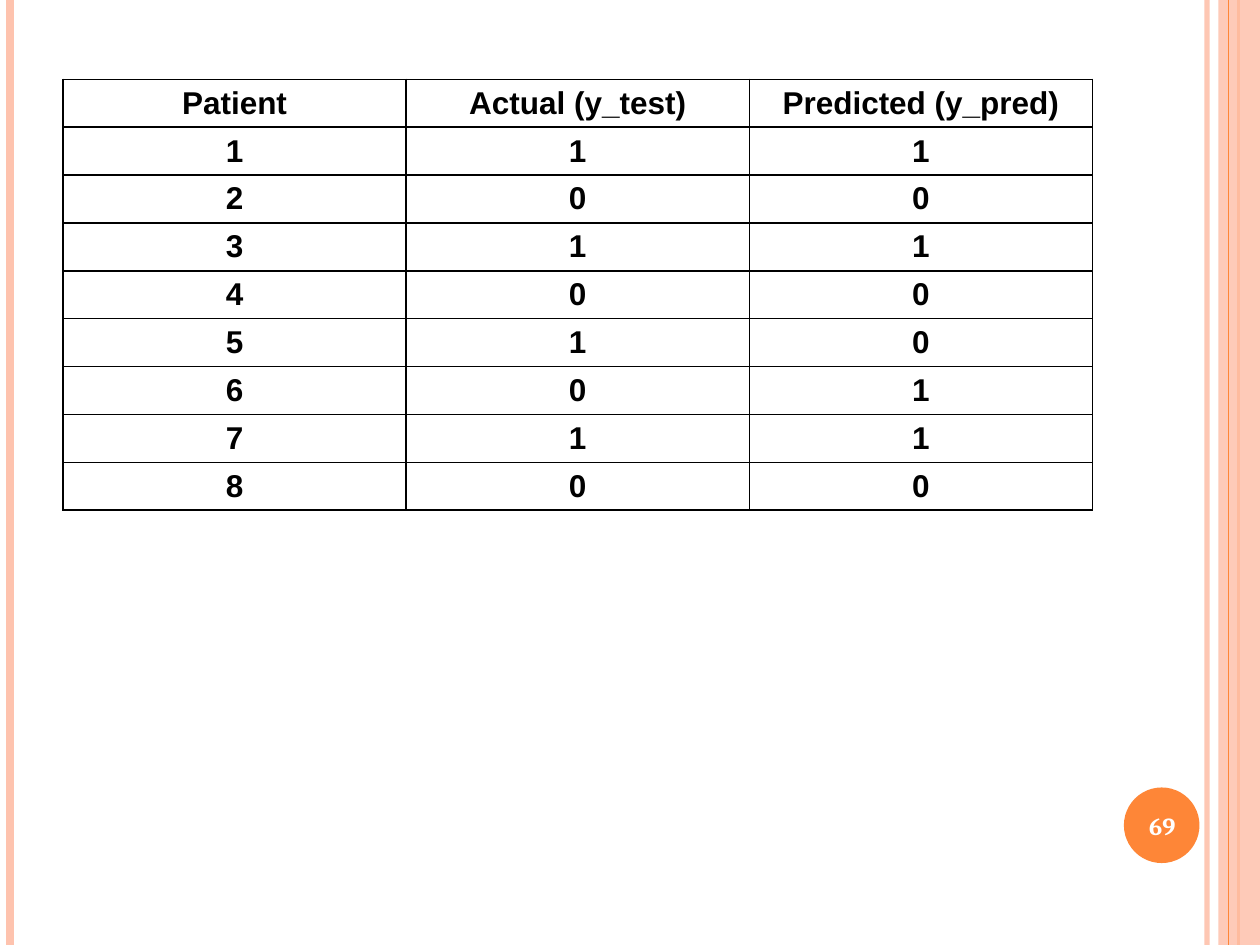
from lxml.etree import SubElement
from pptx import Presentation
from pptx.dml.color import RGBColor
from pptx.enum.shapes import MSO_CONNECTOR, MSO_SHAPE
from pptx.enum.text import MSO_ANCHOR, PP_ALIGN
from pptx.oxml import parse_xml
from pptx.oxml.ns import nsdecls, qn
from pptx.util import Inches, Pt

PEACH, ORANGE, BLACK, WHITE = "FEC3AE", "FE8637", "000000", "FFFFFF"
SLIDE_WIDTH, SLIDE_HEIGHT = 10, 7.5
HEADERS = ["Patient", "Actual (y_test)", "Predicted (y_pred)"]
ACTUAL = [1, 0, 1, 0, 1, 0, 1, 0]
PREDICTED = [1, 0, 1, 0, 0, 1, 1, 0]
ROW_HEIGHT = 0.38
CELL_FORMAT = {"size": Pt(18), "name": "Arial", "bold": True}
NUMBER_FORMAT = {"size": Pt(14), "name": "Cambria", "bold": True}


def color(hex_value):
    return RGBColor.from_string(hex_value)


def set_opacity(fill_parent, percent):
    """Set the opacity of the solid fill directly below the given element."""
    solid_color = fill_parent.find(qn("a:solidFill"))[0]
    SubElement(solid_color, qn("a:alpha"), val=str(percent * 1000))


def add_vertical_line(slide, x, hex_value, width, opacity=100):
    line = slide.shapes.add_connector(
        MSO_CONNECTOR.STRAIGHT, Inches(x), 0, Inches(x), Inches(SLIDE_HEIGHT))
    line.line.color.rgb = color(hex_value)
    line.line.width = Pt(width)
    properties = line._element.spPr
    if opacity < 100:
        set_opacity(properties.find(qn("a:ln")), opacity)
    SubElement(properties, qn("a:effectLst"))


def add_filled_shape(slide, kind, bounds, hex_value, opacity=100):
    shape = slide.shapes.add_shape(kind, *map(Inches, bounds))
    shape.shadow.inherit = False
    shape.fill.solid()
    shape.fill.fore_color.rgb = color(hex_value)
    shape.line.fill.background()
    if opacity < 100:
        set_opacity(shape._element.spPr, opacity)


def write_centered(text_frame, text, hex_value, font_format):
    paragraph = text_frame.paragraphs[0]
    paragraph.alignment = PP_ALIGN.CENTER
    run = paragraph.add_run()
    run.text = text
    run.font.color.rgb = color(hex_value)
    for name, value in font_format.items():
        setattr(run.font, name, value)


def add_cell_borders(cell, hex_value):
    properties = cell._tc.get_or_add_tcPr()
    for position, side in enumerate(("lnL", "lnR", "lnT", "lnB")):
        properties.insert(position, parse_xml(
            f'<a:{side} {nsdecls("a")} w="12700"><a:solidFill>'
            f'<a:srgbClr val="{hex_value}"/></a:solidFill></a:{side}>'))


def add_prediction_table(slide):
    results = zip(ACTUAL, PREDICTED)
    rows = [HEADERS] + [[patient, *pair] for patient, pair in enumerate(results, 1)]
    table = slide.shapes.add_table(
        len(rows), len(HEADERS), Inches(0.5), Inches(0.63),
        Inches(8.17), Inches(ROW_HEIGHT * len(rows))).table
    for table_row, values in zip(table.rows, rows):
        table_row.height = Inches(ROW_HEIGHT)
        for cell, value in zip(table_row.cells, values):
            cell.fill.background()
            cell.vertical_anchor = MSO_ANCHOR.MIDDLE
            cell.margin_top = cell.margin_bottom = Inches(0.03)
            add_cell_borders(cell, BLACK)
            write_centered(cell.text_frame, str(value), BLACK, CELL_FORMAT)


def add_slide_number(slide, number):
    add_filled_shape(slide, MSO_SHAPE.OVAL, (8.92, 6.25, 0.6, 0.6), ORANGE)
    box = slide.shapes.add_textbox(*map(Inches, (8.89, 6.27, 0.67, 0.57)))
    box.text_frame.word_wrap = True
    box.text_frame.vertical_anchor = MSO_ANCHOR.MIDDLE
    write_centered(box.text_frame, number, WHITE, NUMBER_FORMAT)


def add_side_stripes(slide):
    add_vertical_line(slide, 9.58, PEACH, 3, opacity=93)
    add_vertical_line(slide, 0.08, PEACH, 4.5)
    add_vertical_line(slide, 9.83, ORANGE, 1.5)
    add_filled_shape(slide, MSO_SHAPE.RECTANGLE,
                     (9.67, 0, SLIDE_WIDTH - 9.67, SLIDE_HEIGHT), PEACH, opacity=87)
    add_vertical_line(slide, 9.75, ORANGE, 0.75)


def main():
    presentation = Presentation()
    presentation.slide_width = Inches(SLIDE_WIDTH)
    presentation.slide_height = Inches(SLIDE_HEIGHT)
    slide = presentation.slides.add_slide(presentation.slide_layouts[6])
    add_side_stripes(slide)
    add_prediction_table(slide)
    add_slide_number(slide, "69")
    presentation.save("out.pptx")


if __name__ == "__main__":
    main()
